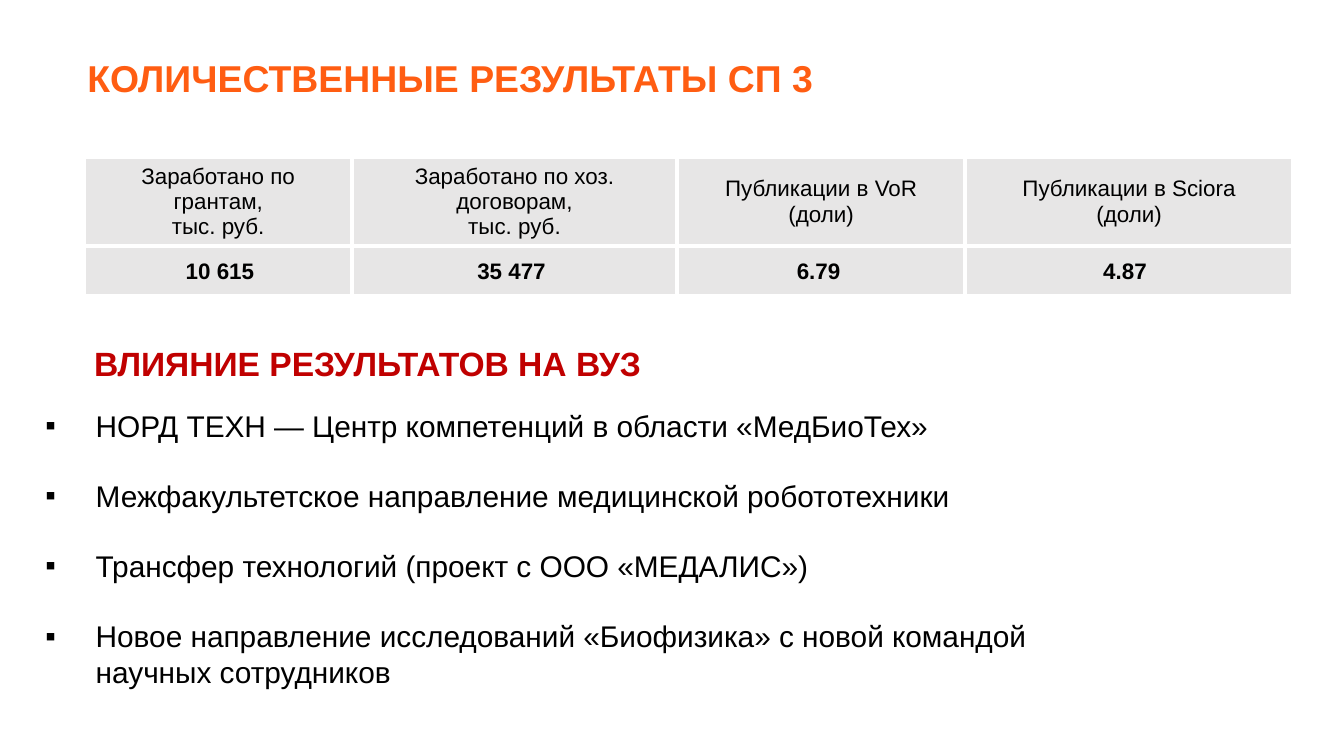
from pptx import Presentation
from pptx.dml.color import RGBColor
from pptx.enum.text import MSO_ANCHOR, PP_ALIGN
from pptx.oxml import parse_xml
from pptx.oxml.ns import nsdecls
from pptx.util import Cm, Pt

BLACK = RGBColor(0x00, 0x00, 0x00)
GREY = RGBColor(0xE7, 0xE6, 0xE6)
ORANGE = RGBColor(0xFF, 0x5D, 0x12)
RED = RGBColor(0xC0, 0x00, 0x00)
WHITE = RGBColor(0xFF, 0xFF, 0xFF)

HEADS = [
    "Заработано по грантам,\nтыс. руб.",
    "Заработано по хоз. договорам,\nтыс. руб.",
    "Публикации в VoR\n(доли)",
    "Публикации в Sciora\n(доли)",
]
SUMS = ["10 615", "35 477", "6.79", "4.87"]
WIDTHS = [5.05, 6.15, 5.44, 6.2]
INSETS = [1.91, 2.37, 2.26, 2.61]
POINTS = [
    "НОРД ТЕХН — Центр компетенций в области «МедБиоТех»",
    "Межфакультетское направление медицинской робототехники",
    "Трансфер технологий (проект с ООО «МЕДАЛИС»)",
    "Новое направление исследований «Биофизика» с новой командой\vнаучных сотрудников",
]


class Page:
    """Builds the results slide in one shared style."""

    def __init__(self, deck, font="Arial"):
        self.slide = deck.slides.add_slide(deck.slide_layouts[6])
        self.font = font

    def style(self, frame, size, color=BLACK, bold=False):
        for para in frame.paragraphs:
            for run in para.runs:
                run.font.name = self.font
                run.font.size = Pt(size)
                run.font.bold = bold
                run.font.color.rgb = color

    def text(self, box, words, size, color=BLACK, bold=False):
        shape = self.slide.shapes.add_textbox(*map(Cm, box))
        frame = shape.text_frame
        frame.word_wrap = True
        frame.text = words
        self.style(frame, size, color, bold)
        return frame

    def bullets(self, box, items, size):
        frame = self.text(box, "\n".join(items), size)
        for para in frame.paragraphs:
            para.space_after = Pt(18.4)
            props = para._p.get_or_add_pPr()
            props.set("marL", str(Cm(0.95)))
            props.set("indent", str(-Cm(0.95)))
            props.append(parse_xml(f'<a:buFont {nsdecls("a")} typeface="{self.font}"/>'))
            props.append(parse_xml(f'<a:buChar {nsdecls("a")} char="▪"/>'))

    def cell(self, cell, words, bold=False):
        cell.text = words
        cell.vertical_anchor = MSO_ANCHOR.MIDDLE
        self.style(cell.text_frame, 12, BLACK, bold)
        props = cell._tc.get_or_add_tcPr()
        for side in ("lnL", "lnR", "lnT", "lnB"):
            props.append(parse_xml(
                f'<a:{side} {nsdecls("a")} w="{Pt(2.25)}"><a:solidFill>'
                f'<a:srgbClr val="{WHITE}"/></a:solidFill></a:{side}>'))
        cell.fill.solid()
        cell.fill.fore_color.rgb = GREY

    def table(self, left, top, heights):
        area = map(Cm, (left, top, sum(WIDTHS), sum(heights)))
        grid = self.slide.shapes.add_table(2, len(WIDTHS), *area).table
        for row, height in zip(grid.rows, heights):
            row.height = Cm(height)
        for col, (head, total, width, inset) in enumerate(zip(HEADS, SUMS, WIDTHS, INSETS)):
            grid.columns[col].width = Cm(width)
            top_cell, low_cell = grid.cell(0, col), grid.cell(1, col)
            self.cell(top_cell, head)
            for para in top_cell.text_frame.paragraphs:
                para.alignment = PP_ALIGN.CENTER
            self.cell(low_cell, total, True)
            low_cell.margin_left = Cm(inset)
            low_cell.margin_right = low_cell.margin_top = Cm(0.02)
            low_cell.margin_bottom = Cm(0)


def main():
    deck = Presentation()
    deck.slide_width, deck.slide_height = Cm(25.4), Cm(14.28)
    page = Page(deck)
    page.table(1.6, 2.97, [1.68, 0.94])
    sub = page.text((1.78, 6.35, 22.63, 1.02), "ВЛИЯНИЕ РЕЗУЛЬТАТОВ НА ВУЗ", 18, RED, True)
    sub.margin_left = Cm(0)
    page.bullets((0.61, 7.57, 24.41, 5.74), POINTS, 16)
    title = page.text((1.4, 1.02, 15.67, 1.02), "КОЛИЧЕСТВЕННЫЕ РЕЗУЛЬТАТЫ СП 3", 20, ORANGE, True)
    title.paragraphs[0].line_spacing = 0.9
    deck.save("out.pptx")


if __name__ == "__main__":
    main()
